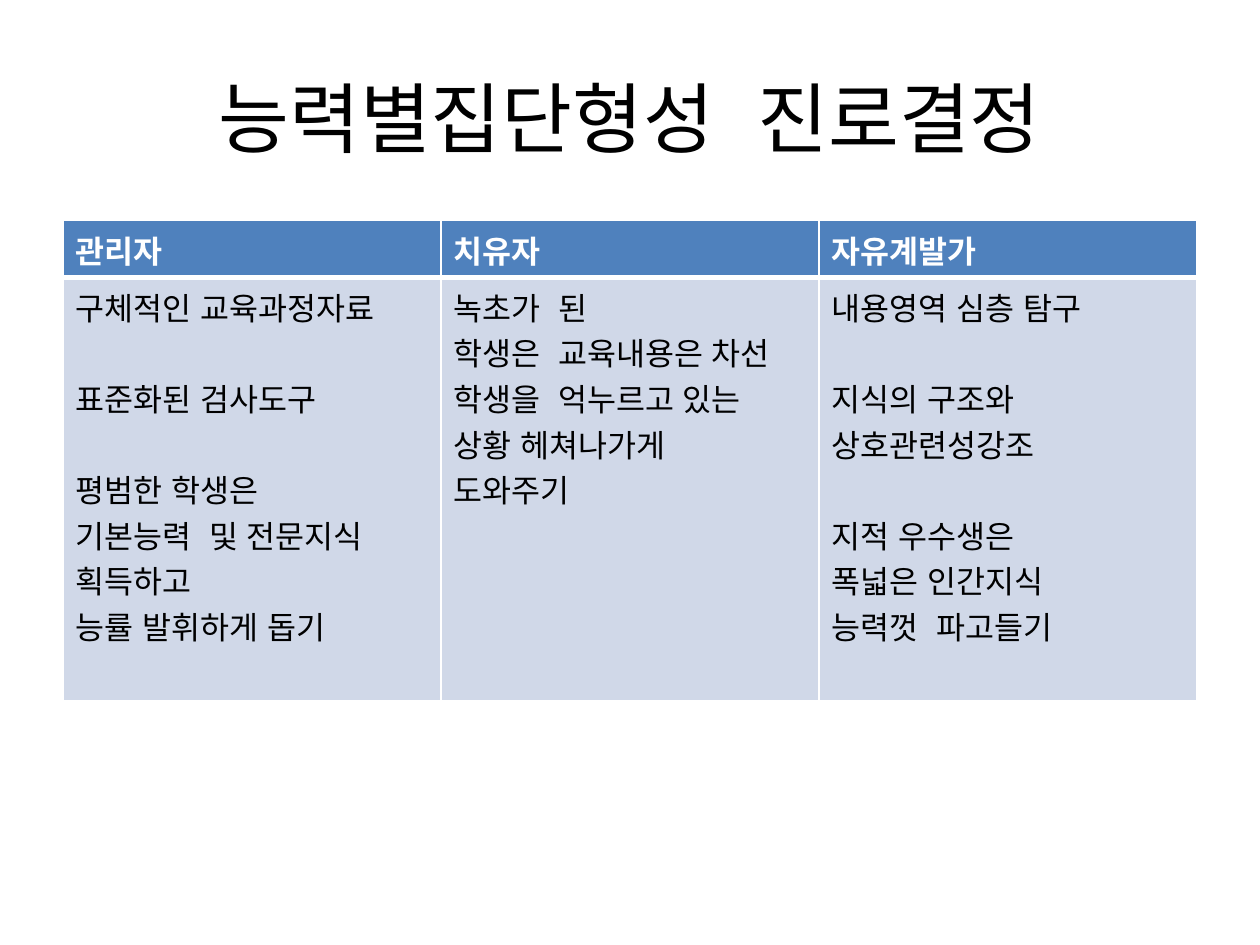
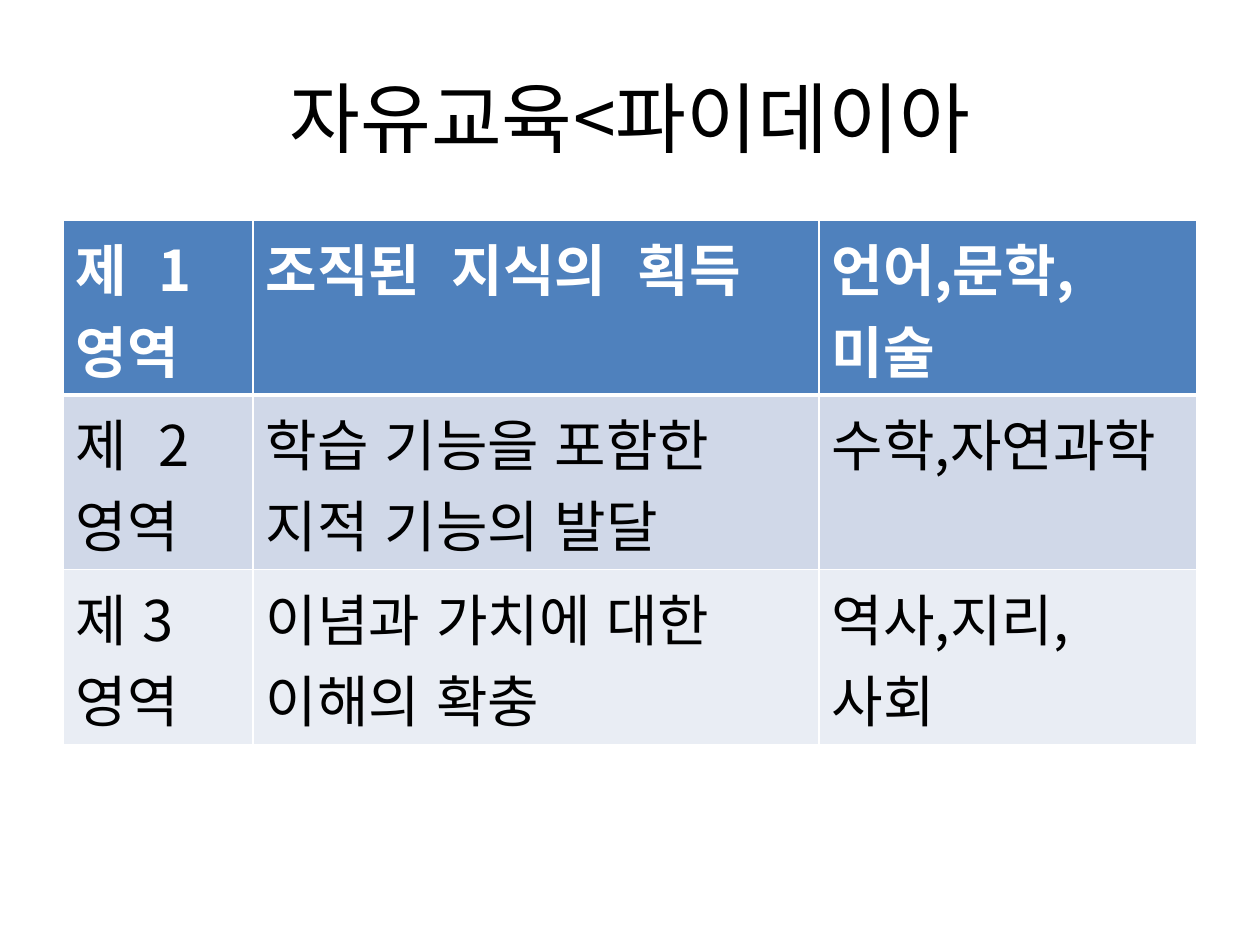
from dataclasses import dataclass

from lxml.etree import SubElement
from pptx import Presentation
from pptx.dml.color import RGBColor
from pptx.enum.lang import MSO_LANGUAGE_ID
from pptx.enum.text import MSO_ANCHOR, PP_ALIGN
from pptx.oxml import parse_xml
from pptx.oxml.ns import nsdecls, qn
from pptx.util import Pt


@dataclass(frozen=True)
class Theme:
    """Colours, type sizes and shared measures in points."""

    font: str = "Noto Sans CJK KR"
    ink: str = "000000"
    white: str = "FFFFFF"
    header: str = "4F81BD"
    bands: tuple = ("D0D8E8", "E9EDF4")
    title_size: float = 44
    left: float = 36
    width: float = 648
    title_top: float = 21.6
    title_height: float = 90
    table_top: float = 126
    thin_rule: float = 1
    header_rule: float = 3
    line_height: float = 1.448


THEME = Theme()

ROLES = {
    "title": "능력별집단형성  진로결정",
    "columns": (216, 216, 216),
    "heights": (32.6, 242),
    "size": 18,
    "rows": [
        ["관리자", "치유자", "자유계발가"],
        [
            "구체적인 교육과정자료\n\n표준화된 검사도구\n\n"
            "평범한 학생은\n기본능력  및 전문지식\n획득하고\n능률 발휘하게 돕기",
            "녹초가  된\n학생은  교육내용은 차선\n학생을  억누르고 있는\n"
            "상황 헤쳐나가게\n도와주기",
            "내용영역 심층 탐구\n\n지식의 구조와\n상호관련성강조\n\n"
            "지적 우수생은\n폭넓은 인간지식\n능력껏  파고들기",
        ],
    ],
}

PAIDEIA = {
    "title": "자유교육<파이데이아",
    "columns": (108.7, 323.3, 216),
    "heights": (99.8, 99.8, 99.8),
    "size": 32,
    "rows": [
        ["제  1영역", "조직된  지식의  획득", "언어,문학,\n미술"],
        ["제  2영역", "학습 기능을 포함한\n지적 기능의 발달", "수학,자연과학"],
        ["제 3 영역", "이념과 가치에 대한\n이해의 확충", "역사,지리,\n사회"],
    ],
}


def write_line(paragraph, wording, size, color, bold=False):
    """Write one formatted run into a paragraph."""
    run = paragraph.add_run()
    run.text = wording
    look = {
        "name": THEME.font,
        "size": Pt(size),
        "bold": bold,
        "language_id": MSO_LANGUAGE_ID.KOREAN,
    }
    for attribute, value in look.items():
        setattr(run.font, attribute, value)
    run.font.color.rgb = RGBColor.from_string(color)
    SubElement(run.font._element, qn("a:ea"), typeface=THEME.font)


def add_title(slide, wording):
    """Add the centred slide title."""
    title = slide.shapes.add_textbox(
        Pt(THEME.left), Pt(THEME.title_top), Pt(THEME.width), Pt(THEME.title_height)
    )
    frame = title.text_frame
    layout = {"word_wrap": True, "vertical_anchor": MSO_ANCHOR.MIDDLE}
    for attribute, value in layout.items():
        setattr(frame, attribute, value)
    heading = frame.paragraphs[0]
    heading.alignment = PP_ALIGN.CENTER
    write_line(heading, wording, THEME.title_size, THEME.ink)


def write_cell(cell, wording, size, color, bold):
    """Write line groups, parting the groups by one line of space."""
    frame = cell.text_frame
    for group_index, group in enumerate(wording.split("\n\n")):
        for line_index, line in enumerate(group.split("\n")):
            first = group_index == line_index == 0
            paragraph = frame.paragraphs[0] if first else frame.add_paragraph()
            if group_index and not line_index:
                paragraph.space_before = Pt(size * THEME.line_height)
            write_line(paragraph, line, size, color, bold)


def rule_cell(cell, top, bottom):
    """Draw white rules on the four sides of a cell."""
    widths = {"L": THEME.thin_rule, "R": THEME.thin_rule, "T": top, "B": bottom}
    properties = cell._tc.get_or_add_tcPr()
    for position, (side, width) in enumerate(widths.items()):
        rule = parse_xml(
            f'<a:ln{side} {nsdecls("a")} w="{Pt(width)}"><a:solidFill>'
            f'<a:srgbClr val="{THEME.white}"/></a:solidFill></a:ln{side}>'
        )
        properties.insert(position, rule)


def add_banded_table(slide, rows, columns, heights, size):
    """Add a table with a header row and alternating body bands."""
    table = slide.shapes.add_table(
        len(rows), len(columns), Pt(THEME.left), Pt(THEME.table_top),
        Pt(THEME.width), Pt(sum(heights)),
    ).table
    for column, width in zip(table.columns, columns):
        column.width = Pt(width)
    for index, (row, height, wordings) in enumerate(zip(table.rows, heights, rows)):
        row.height = Pt(height)
        is_header = index == 0
        band = THEME.header if is_header else THEME.bands[(index - 1) % 2]
        color = THEME.white if is_header else THEME.ink
        top = THEME.header_rule if index == 1 else THEME.thin_rule
        bottom = THEME.header_rule if is_header else THEME.thin_rule
        for cell, wording in zip(row.cells, wordings):
            cell.fill.solid()
            cell.fill.fore_color.rgb = RGBColor.from_string(band)
            rule_cell(cell, top, bottom)
            write_cell(cell, wording, size, color, is_header)


def main():
    """Build both slides and save the presentation."""
    deck = Presentation()
    deck.slide_width, deck.slide_height = Pt(720), Pt(540)
    for content in (ROLES, PAIDEIA):
        slide = deck.slides.add_slide(deck.slide_layouts[6])
        add_title(slide, content["title"])
        add_banded_table(
            slide, content["rows"], content["columns"], content["heights"], content["size"]
        )
    deck.save("out.pptx")


if __name__ == "__main__":
    main()
